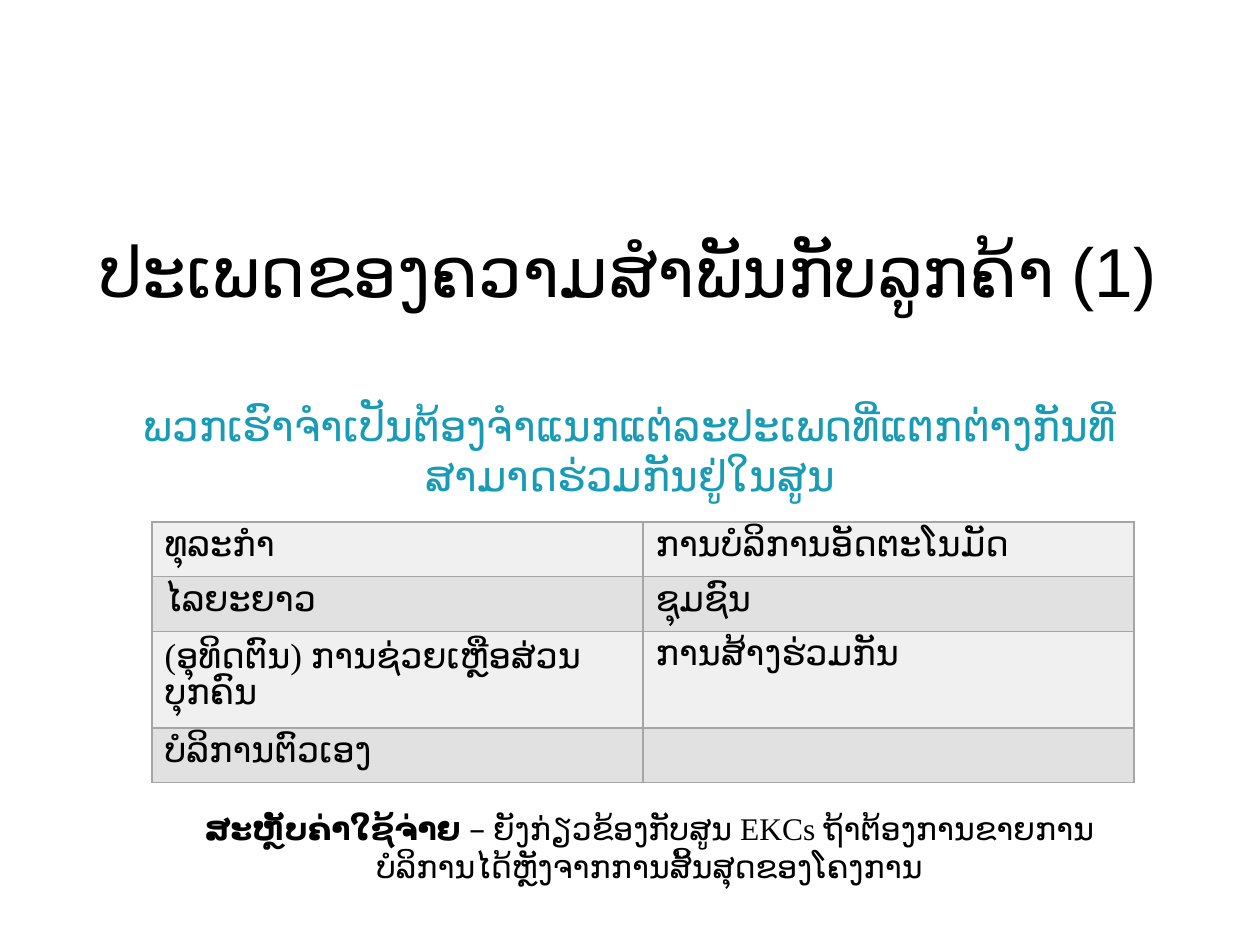
from lxml import etree
from pptx import Presentation
from pptx.dml.color import RGBColor
from pptx.enum.text import MSO_ANCHOR, PP_ALIGN
from pptx.oxml.ns import qn
from pptx.util import Emu, Pt

LEFT, CENTER = PP_ALIGN.LEFT, PP_ALIGN.CENTER
TOP, MIDDLE = MSO_ANCHOR.TOP, MSO_ANCHOR.MIDDLE
BLACK = RGBColor(0x00, 0x00, 0x00)
TEAL = RGBColor(0x18, 0x9B, 0xB5)
BORDER = RGBColor(0xA5, 0xA5, 0xA5)
BANDS = (RGBColor(0xF0, 0xF0, 0xF0), RGBColor(0xE1, 0xE1, 0xE1))
SANS, SERIF = "Arial", "Times New Roman"

TITLE = "ປະເພດຂອງຄວາມສໍາພັນກັບລູກຄ້າ (1)"
SUBTITLE = "ພວກເຮົາຈໍາເປັນຕ້ອງຈໍາແນກແຕ່ລະປະເພດທີ່ແຕກຕ່າງກັນທີ່ສາມາດຮ່ວມກັນຢູ່ໃນສູນ"
RELATIONSHIPS = [
    ("ທຸລະກຳ", "ການບໍລິການອັດຕະໂນມັດ"),
    ("ໄລຍະຍາວ", "ຊຸມຊົນ"),
    ("(ອຸທິດຕົນ) ການຊ່ວຍເຫຼືອສ່ວນບຸກຄົນ", "ການສ້າງຮ່ວມກັນ"),
    ("ບໍລິການຕົວເອງ", ""),
]
NOTE_LEAD = "ສະຫຼັບຄ່າໃຊ້ຈ່າຍ "
NOTE = "– ຍັງກ່ຽວຂ້ອງກັບສູນ EKCs ຖ້າຕ້ອງການຂາຍການບໍລິການໄດ້ຫຼັງຈາກການສິ້ນສຸດຂອງໂຄງການ"

TABLE_LEFT, TABLE_TOP = 152, 522
COLUMN_WIDTH, ROW_HEIGHT = 491, 53


def px(length):
    return Emu(round(length * 914400 / 126))


def style_run(run, size, font_name, color, bold=False):
    run.font.size = Pt(size)
    run.font.name = font_name
    run.font.color.rgb = color
    run.font.bold = bold


def add_text(slide, box, runs, size, font_name, color, align, anchor=TOP):
    shape = slide.shapes.add_textbox(*map(px, box))
    text_frame = shape.text_frame
    text_frame.word_wrap = True
    text_frame.vertical_anchor = anchor
    paragraph = text_frame.paragraphs[0]
    paragraph.alignment = align
    for text, bold in runs:
        run = paragraph.add_run()
        run.text = text
        style_run(run, size, font_name, color, bold)
    return paragraph


def add_borders(cell):
    properties = cell._tc.get_or_add_tcPr()
    for position, side in enumerate(("a:lnL", "a:lnR", "a:lnT", "a:lnB")):
        line = etree.Element(qn(side), w=str(Pt(1)))
        fill = etree.SubElement(line, qn("a:solidFill"))
        etree.SubElement(fill, qn("a:srgbClr"), val=str(BORDER))
        properties.insert(position, line)


def add_relationship_table(slide):
    row_count, column_count = len(RELATIONSHIPS), len(RELATIONSHIPS[0])
    table = slide.shapes.add_table(
        row_count, column_count, px(TABLE_LEFT), px(TABLE_TOP),
        px(COLUMN_WIDTH * column_count), px(ROW_HEIGHT * row_count),
    ).table
    table.first_row = False
    for row_index, row in enumerate(RELATIONSHIPS):
        for column_index, text in enumerate(row):
            cell = table.cell(row_index, column_index)
            cell.fill.solid()
            cell.fill.fore_color.rgb = BANDS[row_index % 2]
            add_borders(cell)
            if text:
                paragraph = cell.text_frame.paragraphs[0]
                paragraph.text = text
                style_run(paragraph.runs[0], 20, SERIF, BLACK)


def main():
    presentation = Presentation()
    presentation.slide_width, presentation.slide_height = px(1260), px(945)
    slide = presentation.slides.add_slide(presentation.slide_layouts[6])
    title = add_text(slide, (87, 220, 1086, 110), [(TITLE, False)],
                     39.6, SANS, BLACK, LEFT, MIDDLE)
    title.line_spacing = 0.9
    subtitle = add_text(slide, (87, 393, 1086, 176), [(SUBTITLE, False)],
                        24, SERIF, TEAL, CENTER)
    subtitle.space_after = Pt(6)
    add_relationship_table(slide)
    add_text(slide, (152, 803, 995, 89), [(NOTE_LEAD, True), (NOTE, False)],
             18, SERIF, BLACK, CENTER)
    presentation.save("out.pptx")


if __name__ == "__main__":
    main()
